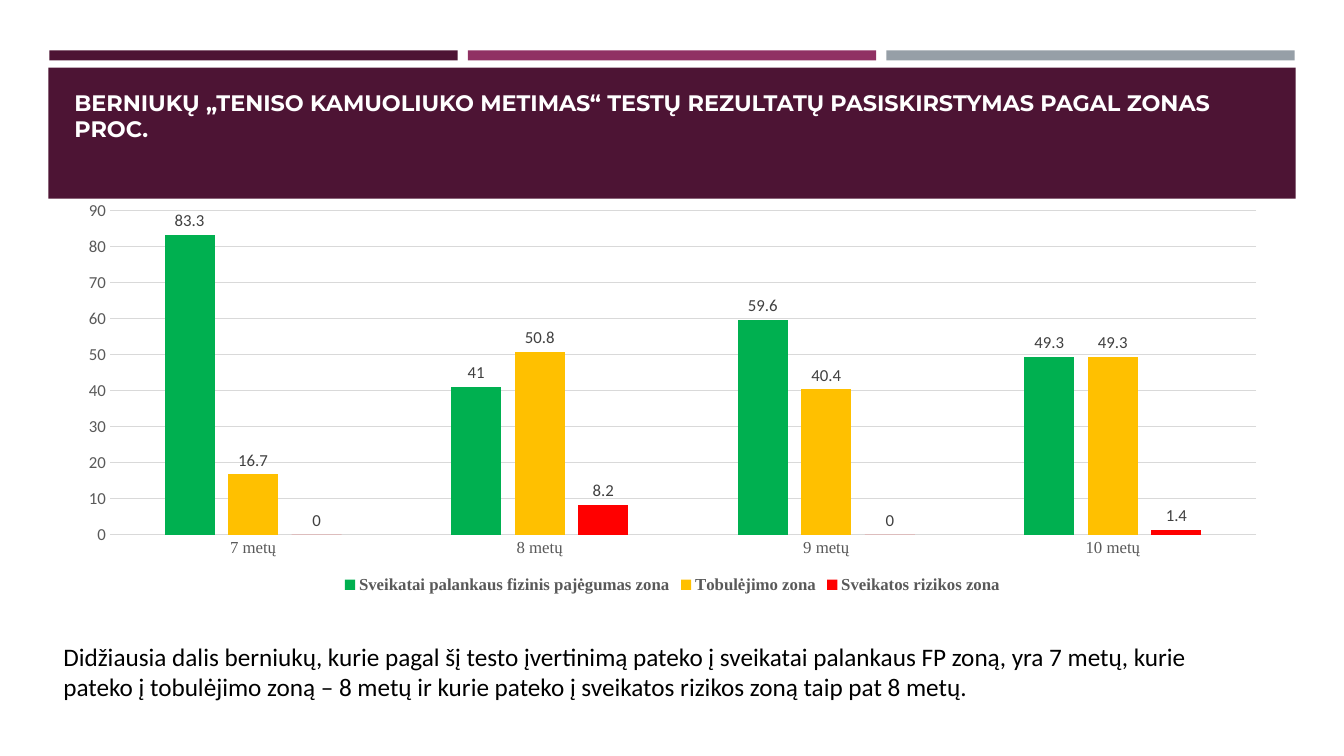
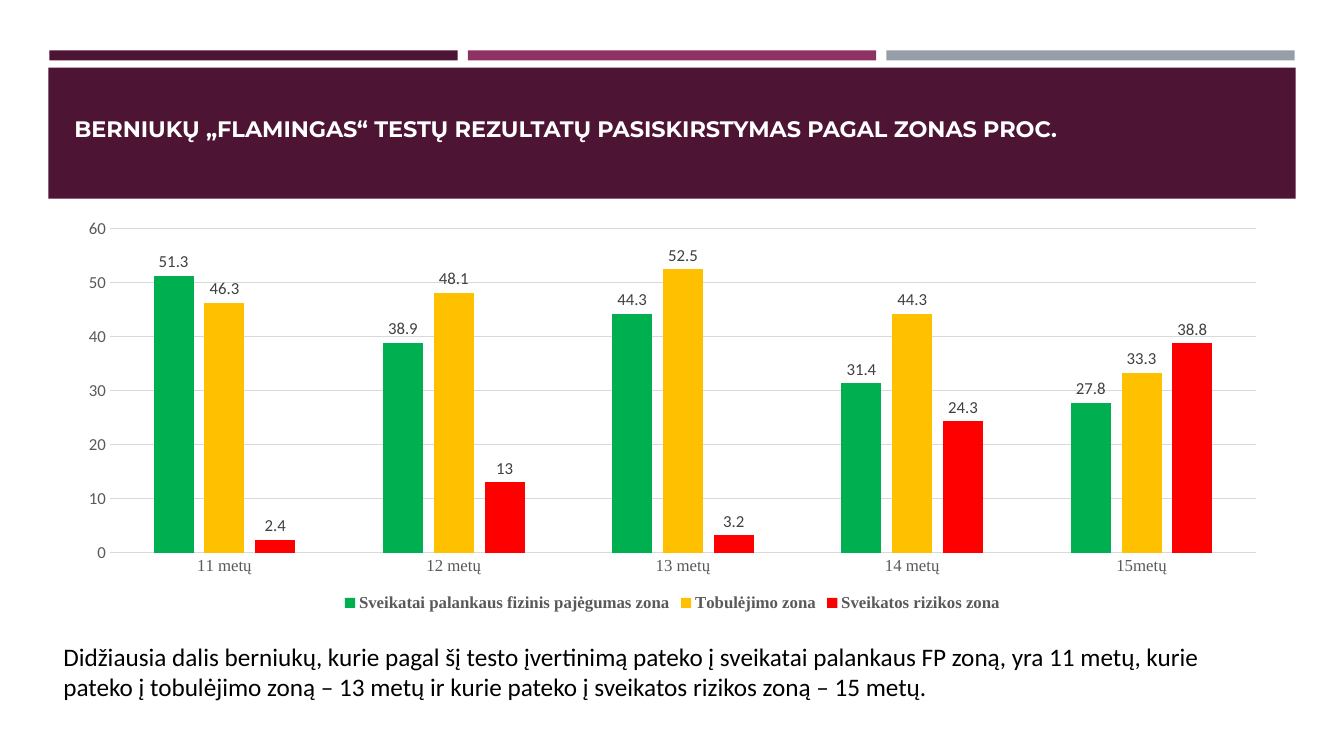
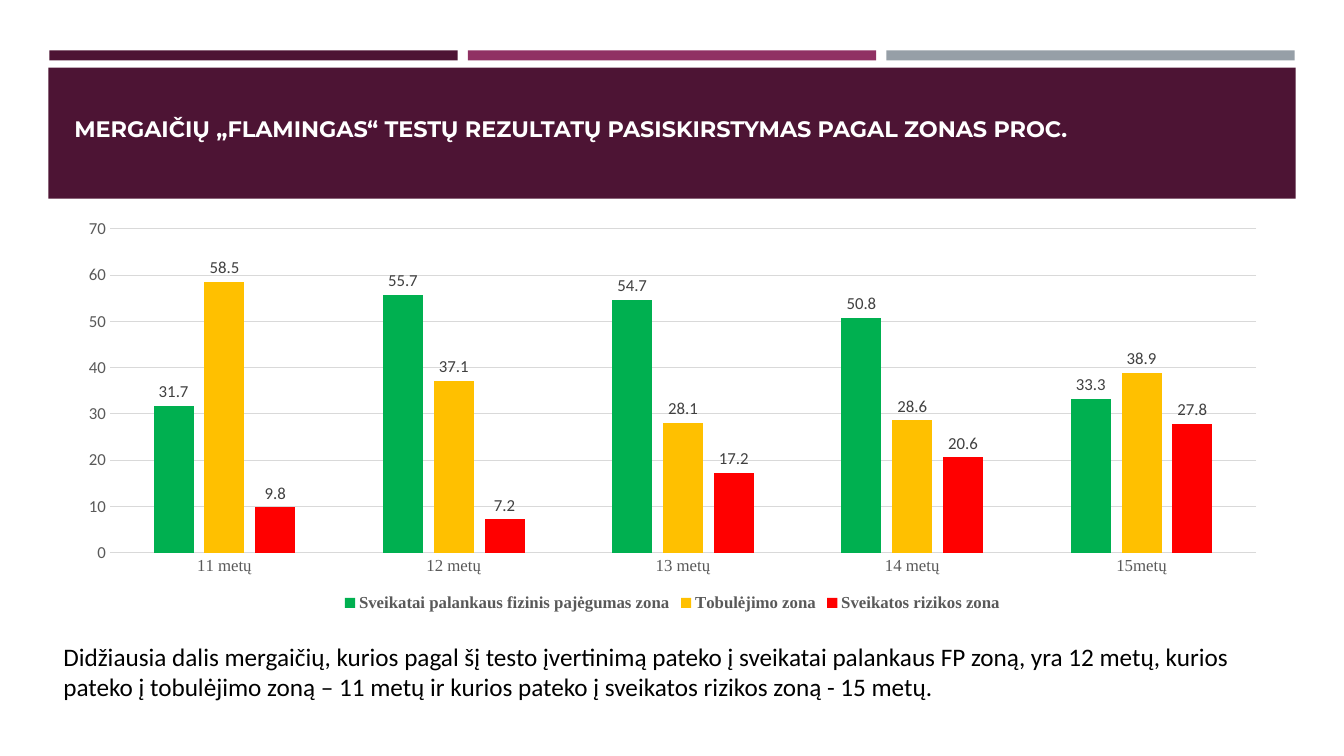
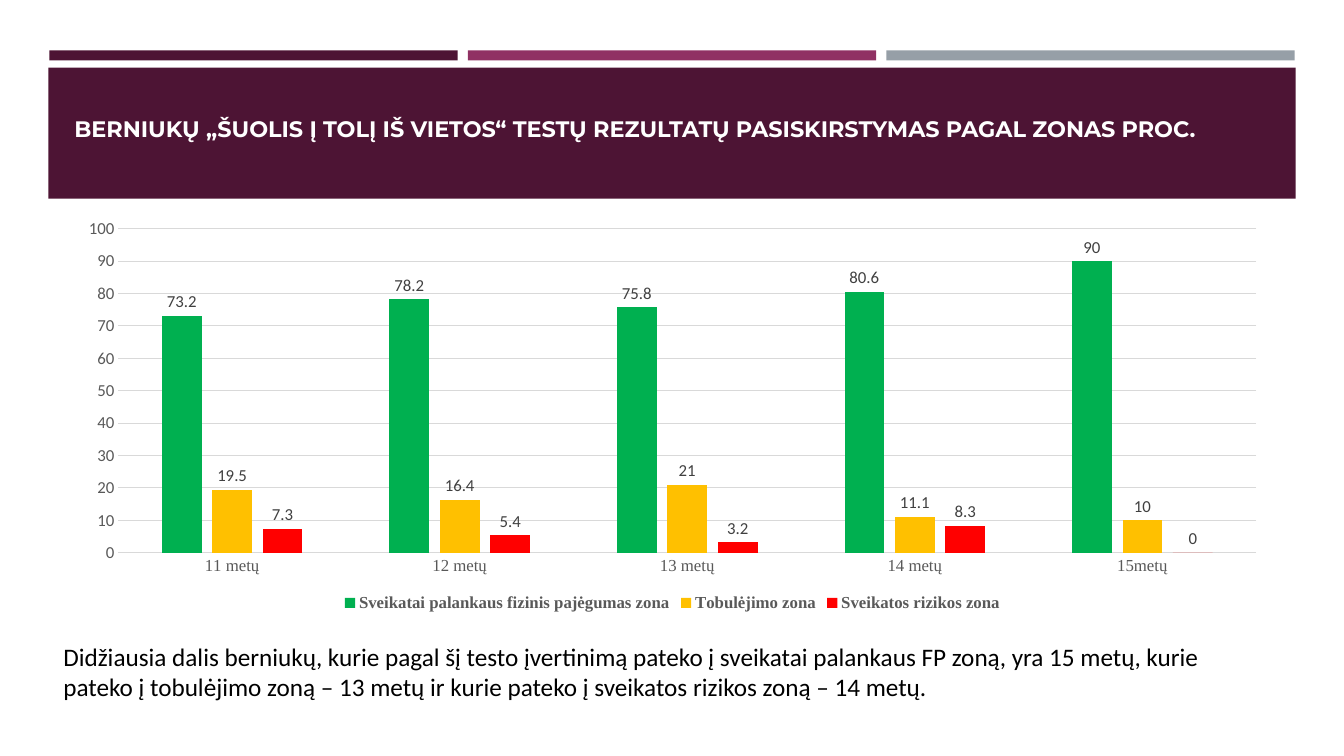
from pptx import Presentation
from pptx.chart import data as chart_data
from pptx.dml.color import RGBColor
from pptx.enum import chart as chart_enum, shapes, text
from pptx.util import Inches, Pt

PLUM = RGBColor(0x4D, 0x14, 0x34)
MAGENTA = RGBColor(0x90, 0x31, 0x63)
STEEL = RGBColor(0x96, 0x9F, 0xA7)
WHITE = RGBColor(0xFF, 0xFF, 0xFF)
BLACK = RGBColor(0x00, 0x00, 0x00)
AXIS_GRAY = RGBColor(0x59, 0x59, 0x59)
LABEL_GRAY = RGBColor(0x40, 0x40, 0x40)
GRID_GRAY = RGBColor(0xD9, 0xD9, 0xD9)
GREEN = RGBColor(0x00, 0xB0, 0x50)
AMBER = RGBColor(0xFF, 0xC0, 0x00)
RED = RGBColor(0xFF, 0x00, 0x00)

TITLE_FONT, BODY_FONT, SERIF_FONT = "Montserrat", "Calibri", "Times New Roman"

# Boxes are left, top, width, height in inches
STRIP_BOX = (0.49, 0.5, 12.35, 0.1)
BAND_BOX = (0.48, 0.67, 12.37, 1.3)
TITLE_BOX = (0.64, 0.61, 12.06, 1.11)
NOTE_BOX = (0.53, 5.93, 12.06, 1.47)
CHART_LEFT, CHART_WIDTH, CHART_HEIGHT = 0.64, 12.06, 4.02
STRIP_GAP = 0.1

ZONES = [
    ("Sveikatai palankaus fizinis pajėgumas zona", GREEN),
    ("Tobulėjimo zona", AMBER),
    ("Sveikatos rizikos zona", RED),
]
YOUNGER = ["7 metų", "8 metų", "9 metų", "10 metų"]
OLDER = ["11 metų", "12 metų", "13 metų", "14 metų", "15metų"]

# One entry per slide; values follow the order of ZONES
RESULTS = [
    dict(
        title="BERNIUKŲ „TENISO KAMUOLIUKO METIMAS“ TESTŲ REZULTATŲ "
              "PASISKIRSTYMAS PAGAL ZONAS PROC.",
        ages=YOUNGER, chart_top=1.91, axis_max=90,
        values=[(83.3, 41, 59.6, 49.3), (16.7, 50.8, 40.4, 49.3), (0, 8.2, 0, 1.4)],
        note="Didžiausia dalis berniukų, kurie pagal šį testo įvertinimą pateko į "
             "sveikatai palankaus FP zoną, yra 7 metų, kurie pateko į tobulėjimo zoną "
             "– 8 metų ir kurie pateko į sveikatos rizikos zoną taip pat 8 metų.",
    ),
    dict(
        title="BERNIUKŲ „FLAMINGAS“ TESTŲ REZULTATŲ PASISKIRSTYMAS PAGAL ZONAS PROC.",
        ages=OLDER, chart_top=2.09, axis_max=60,
        values=[(51.3, 38.9, 44.3, 31.4, 27.8), (46.3, 48.1, 52.5, 44.3, 33.3),
                (2.4, 13, 3.2, 24.3, 38.8)],
        note="Didžiausia dalis berniukų, kurie pagal šį testo įvertinimą pateko į "
             "sveikatai palankaus FP zoną, yra 11 metų, kurie pateko į tobulėjimo zoną "
             "– 13 metų ir kurie pateko į sveikatos rizikos zoną – 15 metų.",
    ),
    dict(
        title="MERGAIČIŲ „FLAMINGAS“ TESTŲ REZULTATŲ PASISKIRSTYMAS PAGAL ZONAS PROC.",
        ages=OLDER, chart_top=2.09, axis_max=70,
        values=[(31.7, 55.7, 54.7, 50.8, 33.3), (58.5, 37.1, 28.1, 28.6, 38.9),
                (9.8, 7.2, 17.2, 20.6, 27.8)],
        note="Didžiausia dalis mergaičių, kurios pagal šį testo įvertinimą pateko į "
             "sveikatai palankaus FP zoną, yra 12 metų, kurios pateko į tobulėjimo zoną "
             "– 11 metų ir kurios pateko į sveikatos rizikos zoną - 15 metų.",
    ),
    dict(
        title="BERNIUKŲ „ŠUOLIS Į TOLĮ IŠ VIETOS“ TESTŲ REZULTATŲ PASISKIRSTYMAS "
              "PAGAL ZONAS PROC.",
        ages=OLDER, chart_top=2.09, axis_max=100,
        values=[(73.2, 78.2, 75.8, 80.6, 90), (19.5, 16.4, 21, 11.1, 10),
                (7.3, 5.4, 3.2, 8.3, 0)],
        note="Didžiausia dalis berniukų, kurie pagal šį testo įvertinimą pateko į "
             "sveikatai palankaus FP zoną, yra 15 metų, kurie pateko į tobulėjimo zoną "
             "– 13 metų ir kurie pateko į sveikatos rizikos zoną – 14 metų.",
    ),
]


def style_font(font, name, size, color, bold=False):
    font.name, font.size, font.bold = name, Pt(size), bold
    font.color.rgb = color


def add_block(page, box, color):
    block = page.shapes.add_shape(shapes.MSO_SHAPE.RECTANGLE, *map(Inches, box))
    block.shadow.inherit = False
    block.fill.solid()
    block.fill.fore_color.rgb = color
    block.line.fill.background()


def add_text(page, box, words, anchor, **font):
    """Add a wrapped text box and return it for further spacing."""
    holder = page.shapes.add_textbox(*map(Inches, box))
    frame = holder.text_frame
    frame.word_wrap = True
    frame.vertical_anchor = anchor
    frame.text = words
    style_font(frame.paragraphs[0].runs[0].font, **font)
    return frame


def add_header(page, title):
    # Three equal strips above the title band
    left, top, width, height = STRIP_BOX
    colors = (PLUM, MAGENTA, STEEL)
    strip_width = (width - STRIP_GAP * (len(colors) - 1)) / len(colors)
    for index, color in enumerate(colors):
        strip_left = left + index * (strip_width + STRIP_GAP)
        add_block(page, (strip_left, top, strip_width, height), color)

    # Title band
    add_block(page, BAND_BOX, PLUM)
    frame = add_text(page, TITLE_BOX, title, text.MSO_ANCHOR.BOTTOM,
                     name=TITLE_FONT, size=16, color=WHITE, bold=True)
    frame.margin_bottom = Inches(0.31)
    frame.paragraphs[0].line_spacing = 0.95


def add_zone_chart(page, box, ages, values, axis_max):
    table = chart_data.CategoryChartData()
    table.categories = ages
    for (zone, _), numbers in zip(ZONES, values):
        table.add_series(zone, numbers)
    chart = page.shapes.add_chart(chart_enum.XL_CHART_TYPE.COLUMN_CLUSTERED,
                                  *map(Inches, box), table).chart
    style_font(chart.font, BODY_FONT, 10, BLACK)
    chart.has_title = False

    # Legend
    chart.has_legend = True
    chart.legend.position = chart_enum.XL_LEGEND_POSITION.BOTTOM
    chart.legend.include_in_layout = False
    style_font(chart.legend.font, SERIF_FONT, 12, AXIS_GRAY, bold=True)

    # Axes
    for axis, font_name in ((chart.category_axis, SERIF_FONT),
                            (chart.value_axis, BODY_FONT)):
        axis.major_tick_mark = axis.minor_tick_mark = chart_enum.XL_TICK_MARK.NONE
        style_font(axis.tick_labels.font, font_name, 12, AXIS_GRAY)
    scale = chart.value_axis
    scale.minimum_scale, scale.maximum_scale, scale.major_unit = 0, axis_max, 10
    scale.format.line.fill.background()
    for line in (chart.category_axis.format.line, scale.major_gridlines.format.line):
        line.color.rgb = GRID_GRAY
        line.width = Pt(0.75)

    # Columns and their labels
    plot = chart.plots[0]
    plot.gap_width, plot.overlap, plot.vary_by_categories = 219, -27, False
    for series, (_, color) in zip(plot.series, ZONES):
        series.format.fill.solid()
        series.format.fill.fore_color.rgb = color
        series.invert_if_negative = False
        labels = series.data_labels
        labels.show_value = True
        labels.position = chart_enum.XL_LABEL_POSITION.OUTSIDE_END
        style_font(labels.font, BODY_FONT, 12, LABEL_GRAY)


def add_note(page, box, note):
    frame = add_text(page, box, note, text.MSO_ANCHOR.MIDDLE,
                     name=BODY_FONT, size=18, color=BLACK)
    para = frame.paragraphs[0]
    para.space_before, para.space_after = Pt(3.6), Pt(6)


def add_result_page(deck, result):
    page = deck.slides.add_slide(deck.slide_layouts[6])
    add_header(page, result["title"])
    chart_box = (CHART_LEFT, result["chart_top"], CHART_WIDTH, CHART_HEIGHT)
    add_zone_chart(page, chart_box, result["ages"], result["values"], result["axis_max"])
    add_note(page, NOTE_BOX, result["note"])


def main():
    deck = Presentation()
    deck.slide_width, deck.slide_height = Inches(13.33), Inches(7.5)
    for result in RESULTS:
        add_result_page(deck, result)
    deck.save("out.pptx")


if __name__ == "__main__":
    main()
